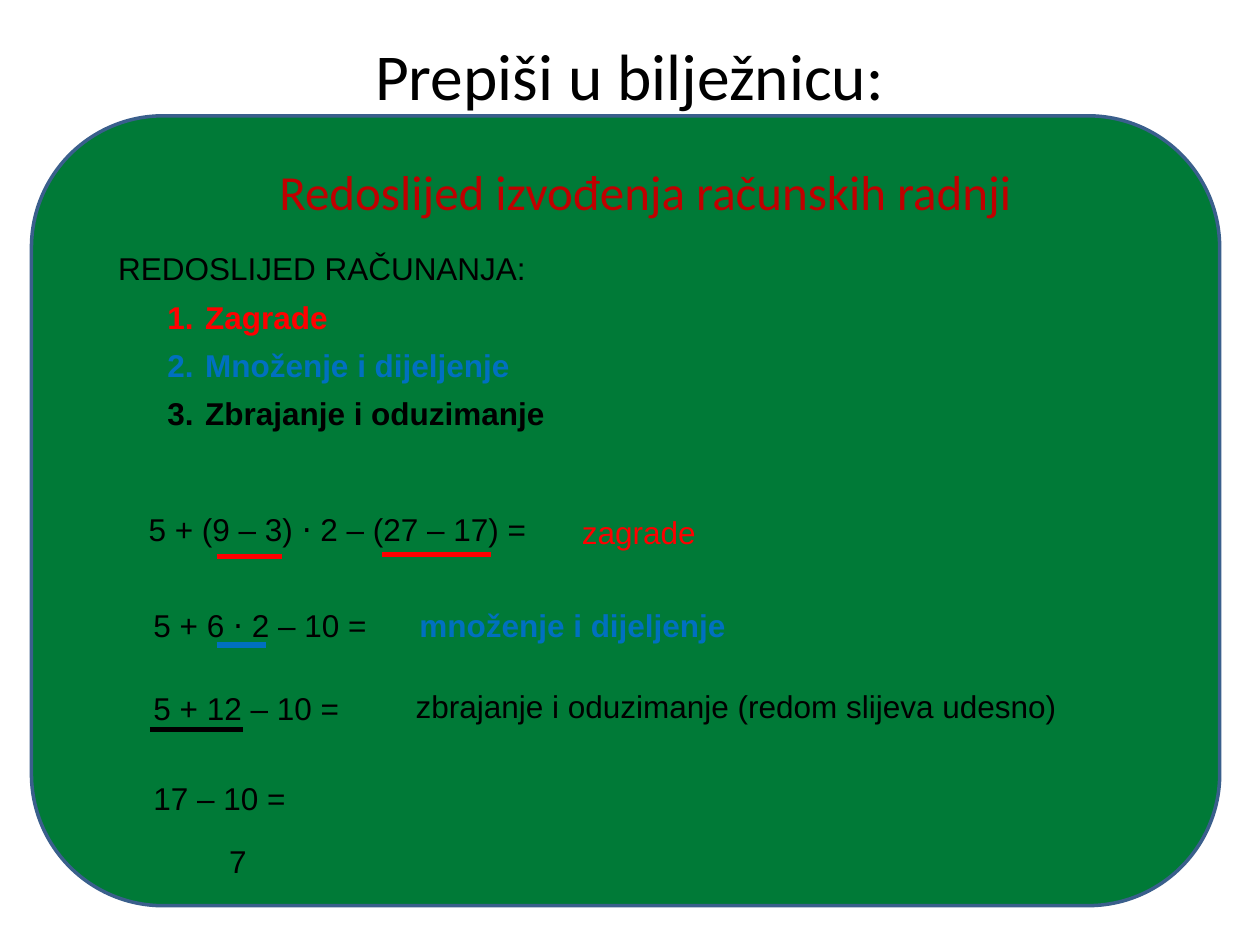
from lxml.etree import SubElement
from pptx import Presentation
from pptx.dml.color import RGBColor
from pptx.enum.shapes import MSO_CONNECTOR, MSO_SHAPE
from pptx.enum.text import MSO_ANCHOR, PP_ALIGN
from pptx.oxml.ns import qn
from pptx.util import Pt

COLORS = {
    "board": "007A37",
    "border": "3A5F8C",
    "black": "000000",
    "red": "FF0000",
    "blue": "0070C0",
    "heading": "C00000",
}
LINE_HEIGHT = 29


def rgb(name):
    return RGBColor.from_string(COLORS[name])


def format_paragraph(para, size=18, color="black", bold=False, font="Arial"):
    for span in para.runs:
        span.font.size = Pt(size)
        span.font.name = font
        span.font.bold = bold
        span.font.color.rgb = rgb(color)


def add_text(page, text, left, top, width, height=LINE_HEIGHT, wrap=True, **style):
    box = page.shapes.add_textbox(Pt(left), Pt(top), Pt(width), Pt(height))
    box.text_frame.word_wrap = wrap
    box.text_frame.text = text
    format_paragraph(box.text_frame.paragraphs[0], **style)
    return box.text_frame


def add_heading(page, text, left, top, width, height, size, color):
    frame = add_text(page, text, left, top, width, height,
                     size=size, color=color, font="Calibri")
    frame.vertical_anchor = MSO_ANCHOR.MIDDLE
    frame.paragraphs[0].alignment = PP_ALIGN.CENTER


def add_board(page):
    board = page.shapes.add_shape(
        MSO_SHAPE.ROUNDED_RECTANGLE, Pt(18), Pt(66.2), Pt(679), Pt(451.4))
    board.shadow.inherit = False
    board.fill.solid()
    board.fill.fore_color.rgb = rgb("board")
    board.line.color.rgb = rgb("border")
    board.line.width = Pt(2)


def number_paragraph(para):
    properties = para._p.get_or_add_pPr()
    properties.set("marL", str(Pt(49.7)))
    properties.set("indent", str(-Pt(21.6)))
    font = SubElement(properties, qn("a:buFont"))
    font.set("typeface", "+mj-lt")
    SubElement(properties, qn("a:buAutoNum")).set("type", "arabicPeriod")


def add_rules(page, title, rules):
    frame = add_text(page, title, 60.5, 139, 522.7, 113)
    for text, color in rules:
        para = frame.add_paragraph()
        para.text = text
        para.space_before = Pt(6)
        number_paragraph(para)
        format_paragraph(para, color=color, bold=True)


def add_underline(page, left, right, y, color):
    line = page.shapes.add_connector(
        MSO_CONNECTOR.STRAIGHT, Pt(left), Pt(y), Pt(right), Pt(y))
    line.line.color.rgb = rgb(color)
    line.line.width = Pt(3)
    SubElement(line._element.spPr, qn("a:effectLst"))


def main():
    deck = Presentation()
    deck.slide_width, deck.slide_height = Pt(720), Pt(540)
    page = deck.slides.add_slide(deck.slide_layouts[6])

    # Title, board and heading
    add_heading(page, "Prepiši u bilježnicu:", 36, 20.2, 648, 44, 37.4, "black")
    add_board(page)
    add_heading(page, "Redoslijed izvođenja računskih radnji",
                139, 88.6, 459.4, 41, 28, "heading")

    # Order of operations
    add_rules(page, "REDOSLIJED RAČUNANJA:", [
        ("Zagrade", "red"),
        ("Množenje i dijeljenje", "blue"),
        ("Zbrajanje i oduzimanje", "black"),
    ])

    # Worked example, step by step
    for text, left, top, width in [
        ("5 + (9 – 3) ⋅ 2 – (27 – 17) =", 77.8, 288, 306),
        ("5 + 6 ⋅ 2 – 10 =", 80.6, 342.7, 306),
        ("5 + 12 – 10 =", 80.6, 390.2, 142.6),
        ("17 – 10 =", 80.6, 441.4, 142.6),
        ("7", 123.8, 477.4, 142.6),
    ]:
        add_text(page, text, left, top, width)

    # Operation named beside each step
    add_text(page, "zagrade", 325.4, 289.4, 100.8, color="red")
    add_text(page, "množenje i dijeljenje", 232.6, 342.7, 190,
             wrap=False, color="blue", bold=True)
    add_text(page, "zbrajanje i oduzimanje (redom slijeva udesno)",
             230.4, 388.8, 389.5, wrap=False)

    # Underlines for the part computed next
    for left, right, y, color in [
        (123.8, 161.3, 318.2, "red"),
        (218.2, 280.8, 316.8, "red"),
        (123.8, 151.9, 368.6, "blue"),
        (85.7, 139, 416.9, "black"),
    ]:
        add_underline(page, left, right, y, color)

    deck.save("out.pptx")


if __name__ == "__main__":
    main()
